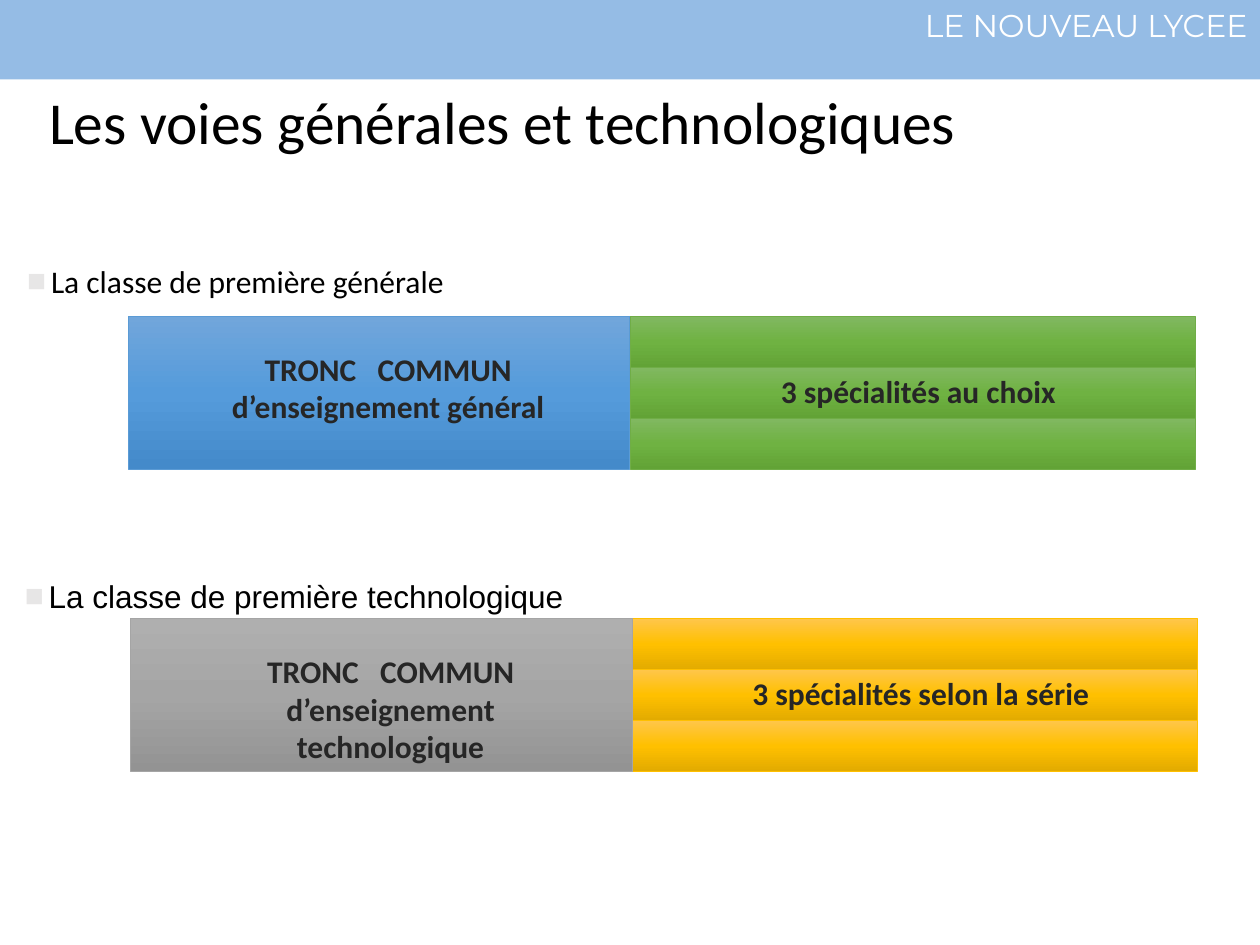
from dataclasses import dataclass

import pptx
import pptx.dml.color
import pptx.enum.shapes
import pptx.enum.text
import pptx.oxml
import pptx.oxml.ns
import pptx.util
from lxml import etree

Cm = pptx.util.Cm
Pt = pptx.util.Pt
RGBColor = pptx.dml.color.RGBColor
ALIGN = pptx.enum.text.PP_ALIGN
ANCHOR = pptx.enum.text.MSO_ANCHOR

BLACK = RGBColor(0x00, 0x00, 0x00)
WHITE = RGBColor(0xFF, 0xFF, 0xFF)
DARK = RGBColor(0x26, 0x26, 0x26)
BULLET_GREY = RGBColor(0xE7, 0xE6, 0xE6)
HEADER_BLUE = RGBColor(0x95, 0xBC, 0xE5)


@dataclass(frozen=True)
class Palette:
    """Top, middle and bottom gradient colours, and the outline."""
    top: RGBColor
    middle: RGBColor
    bottom: RGBColor
    line: RGBColor


BLUE = Palette(RGBColor(0x71, 0xA6, 0xDB), RGBColor(0x55, 0x9B, 0xDB),
               RGBColor(0x44, 0x8A, 0xCA), RGBColor(0x5B, 0x9B, 0xD5))
GREEN = Palette(RGBColor(0x81, 0xB8, 0x61), RGBColor(0x6F, 0xB2, 0x42),
                RGBColor(0x62, 0xA3, 0x36), RGBColor(0x70, 0xAD, 0x47))
GREY = Palette(RGBColor(0xAF, 0xAF, 0xAF), RGBColor(0xA5, 0xA5, 0xA5),
               RGBColor(0x93, 0x93, 0x93), RGBColor(0xA5, 0xA5, 0xA5))
GOLD = Palette(RGBColor(0xFF, 0xC6, 0x4B), RGBColor(0xFF, 0xC0, 0x00),
               RGBColor(0xE3, 0xAB, 0x00), RGBColor(0xFF, 0xC0, 0x00))


@dataclass(frozen=True)
class Track:
    """One school track: bulleted heading, common core and specialities (cm)."""
    heading: str
    heading_font: str
    heading_left: float
    heading_top: float
    left: float
    top: float
    core_words: str
    core_label_height: float
    core_colours: Palette
    choice: str
    choice_colours: Palette


TRACKS = [
    Track("La classe de première générale", "Calibri", 0.3, 3.63, 2.59, 6.38,
          "d’enseignement général", 1.8, BLUE, "3 spécialités au choix", GREEN),
    Track("La classe de première technologique", "Arial", 0.25, 9.98, 2.64, 12.47,
          "d’enseignement technologique", 2.57, GREY, "3 spécialités selon la série", GOLD),
]

CORE_WIDTH, CHOICE_WIDTH = 10.11, 11.4
BAND_COUNT, BAND_HEIGHT = 3, 1.025
LABEL_WIDTH, LABEL_HEIGHT = 7.57, 1.02
WORD_GAP = 814  # extra width after a space, in hundredths of a point


def set_format(target, values: dict) -> None:
    for name, value in values.items():
        setattr(target, name, value)


def add_text(page, left: float, top: float, width: float, height: float,
             parts: list[str], font: str, size: float, colour: RGBColor,
             bold: bool = False, align=ALIGN.LEFT, anchor=ANCHOR.TOP):
    box = page.shapes.add_textbox(Cm(left), Cm(top), Cm(width), Cm(height))
    set_format(box.text_frame, {"word_wrap": True, "vertical_anchor": anchor})
    para = box.text_frame.paragraphs[0]
    para.alignment = align
    for part in parts:
        span = para.add_run()
        span.text = part
        set_format(span.font, {"name": font, "size": Pt(size), "bold": bold})
        span.font.color.rgb = colour
        if part == " ":
            span.font._element.set("spc", str(WORD_GAP))
    return para


def add_bullet(para) -> None:
    properties = para._p.get_or_add_pPr()
    properties.set("marL", str(Cm(0.48)))
    properties.set("indent", str(Cm(-0.48)))
    colour = etree.SubElement(properties, pptx.oxml.ns.qn("a:buClr"))
    etree.SubElement(colour, pptx.oxml.ns.qn("a:srgbClr"), val=str(BULLET_GREY))
    etree.SubElement(properties, pptx.oxml.ns.qn("a:buFont"), typeface="Arial")
    etree.SubElement(properties, pptx.oxml.ns.qn("a:buChar"), char="■")


def add_rectangle(page, left: float, top: float, width: float, height: float):
    box = page.shapes.add_shape(pptx.enum.shapes.MSO_SHAPE.RECTANGLE,
                                Cm(left), Cm(top), Cm(width), Cm(height))
    box.shadow.inherit = False
    return box


def add_gradient_block(page, left: float, top: float, width: float,
                       height: float, colours: Palette) -> None:
    box = add_rectangle(page, left, top, width, height)
    box.fill.gradient()
    box.fill.gradient_angle = 270
    stops = box._element.spPr.find(".//" + pptx.oxml.ns.qn("a:gsLst"))
    for stop in list(stops):
        stops.remove(stop)
    for position, colour in enumerate((colours.top, colours.middle, colours.bottom)):
        stop = etree.SubElement(stops, pptx.oxml.ns.qn("a:gs"), pos=str(position * 50000))
        etree.SubElement(stop, pptx.oxml.ns.qn("a:srgbClr"), val=str(colour))
    box.line.color.rgb = colours.line
    box.line.width = Pt(0.5)


def add_label(page, left: float, top: float, height: float, parts: list[str]) -> None:
    add_text(page, left, top, LABEL_WIDTH, height, parts, "Calibri", 18, DARK,
             bold=True, align=ALIGN.CENTER, anchor=ANCHOR.MIDDLE)


def add_track(page, track: Track) -> None:
    # Bulleted heading
    para = add_text(page, track.heading_left, track.heading_top, 24.79, 2.29,
                    [track.heading], track.heading_font, 18, BLACK)
    add_bullet(para)
    para.line_spacing = 3.0

    # Speciality bands and common core block
    for band in range(BAND_COUNT):
        add_gradient_block(page, track.left + CORE_WIDTH, track.top + band * BAND_HEIGHT,
                           CHOICE_WIDTH, BAND_HEIGHT, track.choice_colours)
    add_gradient_block(page, track.left, track.top, CORE_WIDTH,
                       BAND_COUNT * BAND_HEIGHT, track.core_colours)

    # Labels
    add_label(page, track.left + 1.45, track.top + 0.53, track.core_label_height,
              ["TRONC", " ", "COMMUN " + track.core_words])
    add_label(page, track.left + 12.14, track.top + 0.99, LABEL_HEIGHT, [track.choice])


def main() -> None:
    deck = pptx.Presentation()
    deck.slide_width, deck.slide_height = Cm(25.4), Cm(19.05)
    page = deck.slides.add_slide(deck.slide_layouts[6])

    # Header band
    header = add_rectangle(page, 0, 0, 25.4, 1.6)
    header.fill.solid()
    header.fill.fore_color.rgb = HEADER_BLUE
    header.line.fill.background()
    add_text(page, 6.55, 0, 18.85, 1.8, ["LE NOUVEAU LYCEE"], "Montserrat", 18,
             WHITE, align=ALIGN.RIGHT)

    # Title
    title = add_text(page, 0.74, 1.75, 23.37, 3.58,
                     ["Les voies générales et technologiques"], "Calibri", 34, BLACK)
    title.line_spacing = 0.9

    # Tracks
    for track in TRACKS:
        add_track(page, track)

    deck.save("out.pptx")


if __name__ == "__main__":
    main()
